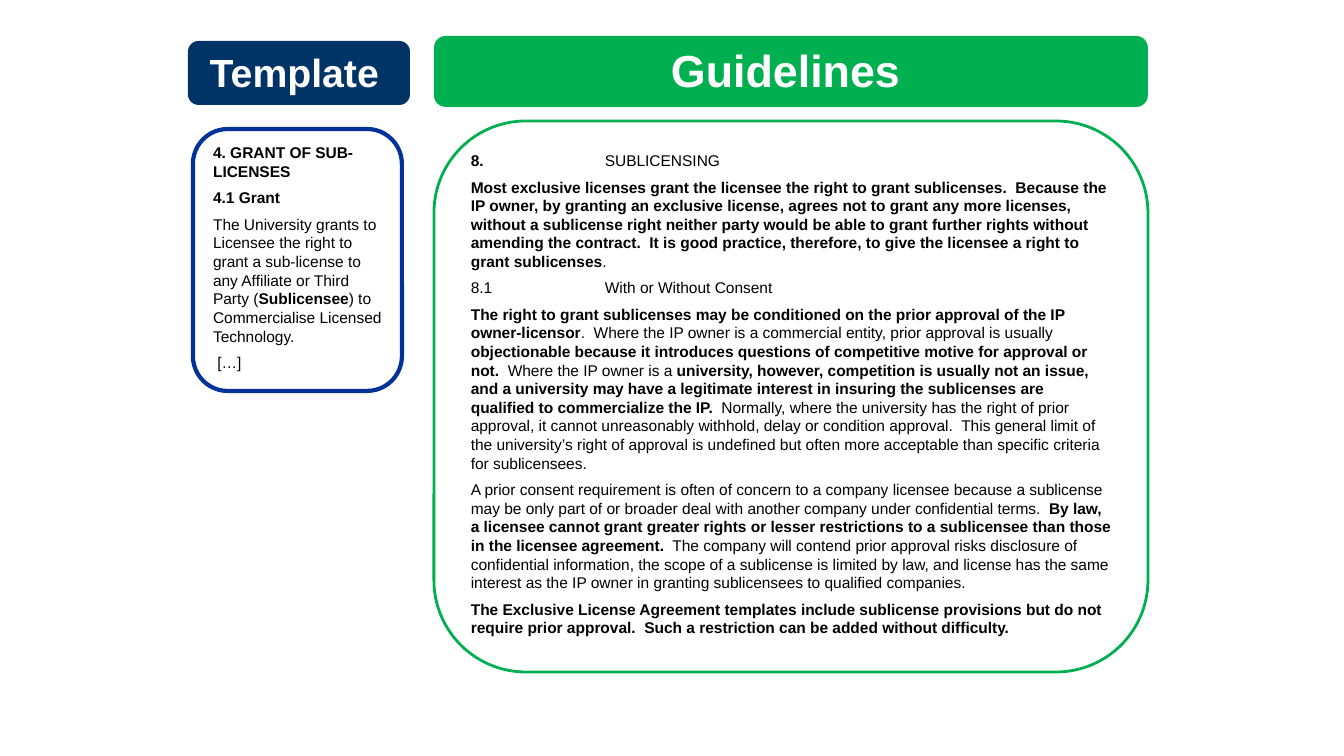
from lxml import etree
from pptx import Presentation
from pptx.dml.color import RGBColor
from pptx.enum.shapes import MSO_SHAPE as SHAPE
from pptx.enum.text import MSO_ANCHOR as ANCHOR, PP_ALIGN as ALIGN
from pptx.oxml.ns import qn
from pptx.util import Emu, Pt

EMU_PER_PX = 914400 / 134.4
BODY_SIZE = 8.3
TAB_STOP = 134

TEMPLATE_TEXT = [
    [("4. GRANT OF SUB-LICENSES", True)],
    [("4.1 Grant", True)],
    [("The University grants to Licensee the right to grant a sub-license to any "
      "Affiliate or Third Party (", False),
     ("Sublicensee", True),
     (") to Commercialise Licensed Technology.", False)],
    [(" […]", False)],
]

GUIDELINES_TEXT = [
    [("8.\t", True), ("SUBLICENSING", False)],
    [("Most exclusive licenses grant the licensee the right to grant sublicenses.  "
      "Because the IP owner, by granting an exclusive license, agrees not to grant any "
      "more licenses, without a sublicense right neither party would be able to grant "
      "further rights without amending the contract.  It is good practice, therefore, "
      "to give the licensee a right to grant sublicenses", True),
     (".", False)],
    [("8.1\tWith or Without Consent", False)],
    [("The right to grant sublicenses may be conditioned on the prior approval of the "
      "IP owner-licensor", True),
     (".  Where the IP owner is a commercial entity, prior approval is usually ", False),
     ("objectionable because it introduces questions of competitive motive for "
      "approval or not.  ", True),
     ("Where the IP owner is a ", False),
     ("university, however, competition is usually not an issue, and a university may "
      "have a legitimate interest in insuring the sublicenses are qualified to "
      "commercialize the IP.", True),
     ("  Normally, where the university has the right of prior approval, it cannot "
      "unreasonably withhold, delay or condition approval.  This general limit of the "
      "university’s right of approval is undefined but often more acceptable than "
      "specific criteria for sublicensees.", False)],
    [("A prior consent requirement is often of concern to a company licensee because a "
      "sublicense may be only part of or broader deal with another company under "
      "confidential terms.  ", False),
     ("By law, a licensee cannot grant greater rights or lesser restrictions to a "
      "sublicensee than those in the licensee agreement.", True),
     ("  The company will contend prior approval risks disclosure of confidential "
      "information, the scope of a sublicense is limited by law, and license has the "
      "same interest as the IP owner in granting sublicensees to qualified "
      "companies.", False)],
    [("The Exclusive License Agreement templates include sublicense provisions but do "
      "not require prior approval.  Such a restriction can be added without "
      "difficulty.", True)],
]


def px(n):
    """Turn pixels into EMU."""
    return Emu(round(n * EMU_PER_PX))


def color(hex_string):
    """Return the colour of a hex string."""
    return RGBColor.from_string(hex_string)


def add_tab_stop(p, position):
    """Give a paragraph one left tab stop."""
    tabs = etree.SubElement(p._p.get_or_add_pPr(), qn("a:tabLst"))
    etree.SubElement(tabs, qn("a:tab"), pos=str(px(position)), algn="l")


def add_panel(slide, box, fill, line=None, width=0):
    """Add a rounded panel and return its text frame."""
    sp = slide.shapes.add_shape(SHAPE.ROUNDED_RECTANGLE, *map(px, box))
    sp.shadow.inherit = False
    sp.fill.solid()
    sp.fill.fore_color.rgb = color(fill)
    if line:
        sp.line.color.rgb = color(line)
        sp.line.width = Pt(width)
    else:
        sp.line.fill.background()
    tf = sp.text_frame
    tf.word_wrap = True
    tf.vertical_anchor = ANCHOR.MIDDLE
    tf.margin_left = tf.margin_right = px(10)
    tf.margin_top, tf.margin_bottom = px(4), px(7)
    return tf


def add_heading(slide, box, text, fill, size):
    """Add a filled heading bar with a smaller trailing space."""
    p = add_panel(slide, box, fill).paragraphs[0]
    p.alignment = ALIGN.CENTER
    p.font.name = "Arial"
    p.font.bold = True
    p.font.color.rgb = color("FFFFFF")
    for part, part_size in ((text, size), (" ", size - 3)):
        r = p.add_run()
        r.text = part
        r.font.size = Pt(part_size)


def add_body(slide, box, paragraphs, line, width):
    """Add an outlined panel of paragraphs with bold and plain runs."""
    tf = add_panel(slide, box, "FFFFFF", line, width)
    tf.margin_top, tf.margin_bottom = px(3), px(8)
    for i, runs in enumerate(paragraphs):
        p = tf.add_paragraph() if i else tf.paragraphs[0]
        p.alignment = ALIGN.LEFT
        if i:
            p.space_before = Pt(BODY_SIZE / 2)
        if any("\t" in text for text, _ in runs):
            add_tab_stop(p, TAB_STOP)
        p.font.name = "Arial"
        p.font.size = Pt(BODY_SIZE)
        p.font.color.rgb = color("000000")
        for text, bold in runs:
            r = p.add_run()
            r.text = text
            r.font.bold = bold


def main():
    """Build the slide and save it."""
    prs = Presentation()
    prs.slide_width, prs.slide_height = px(1344), px(756)
    slide = prs.slides.add_slide(prs.slide_layouts[6])
    add_body(slide, (434, 121, 714, 551), GUIDELINES_TEXT, "00B050", 1.5)
    add_heading(slide, (434, 36, 714, 71), "Guidelines", "00B050", 24)
    add_body(slide, (193, 129, 209, 262), TEMPLATE_TEXT, "003399", 2.25)
    add_heading(slide, (188, 41, 222, 64), "Template", "003366", 21)
    prs.save("out.pptx")


if __name__ == "__main__":
    main()
